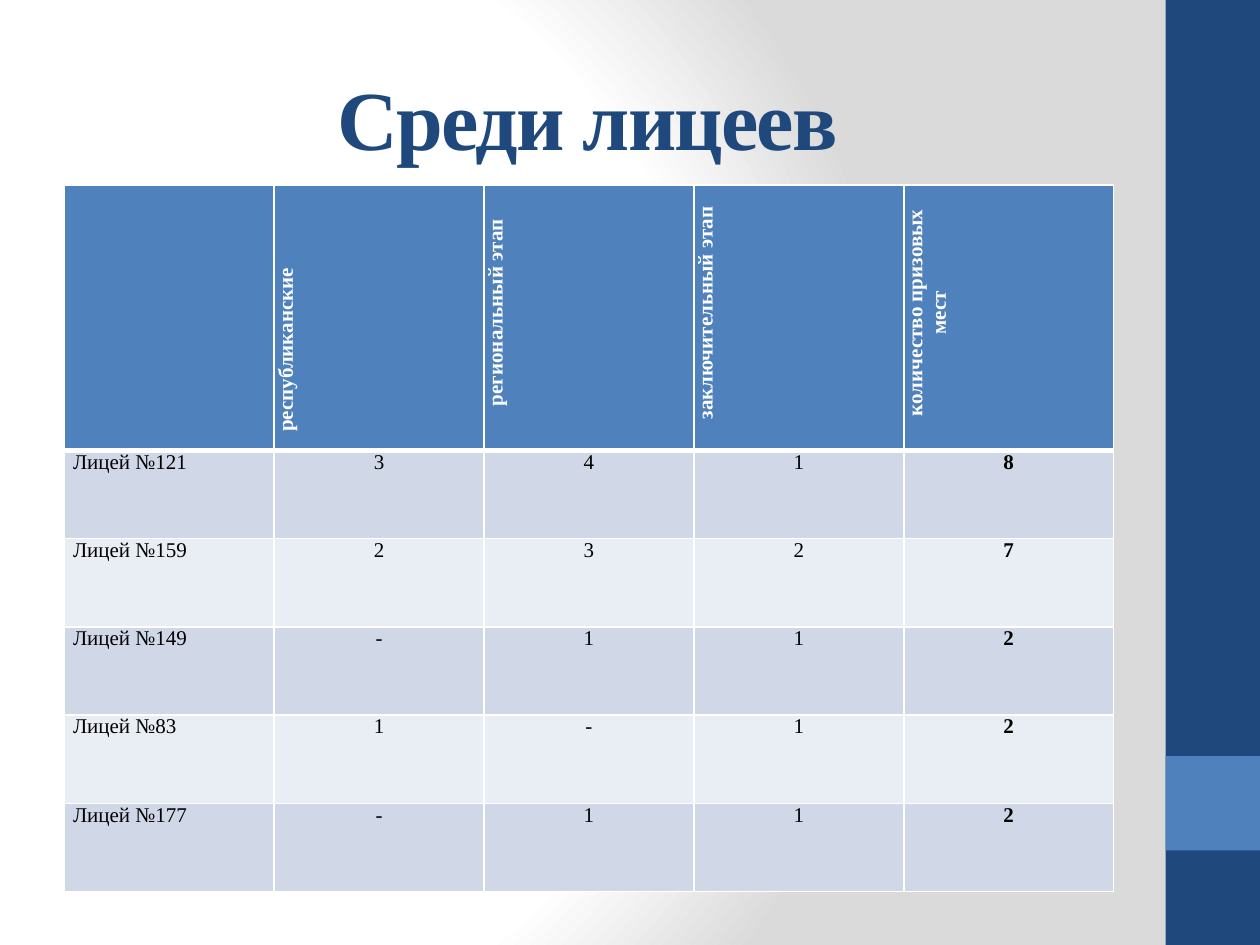
from pptx import Presentation
from pptx.dml.color import RGBColor
from pptx.enum.shapes import MSO_SHAPE
from pptx.enum.text import MSO_ANCHOR, PP_ALIGN
from pptx.oxml import parse_xml
from pptx.oxml.ns import nsdecls
from pptx.util import Inches, Pt

NAVY, BLUE, WHITE, BLACK = "1F497D", "4F81BD", "FFFFFF", "000000"
BANDS = ("D0D8E8", "E9EDF4")
ROWS = (
    ("", "республиканские", "региональный этап", "заключительный этап",
     "количество призовых мест"),
    ("Лицей №121", "3", "4", "1", "8"),
    ("Лицей №159", "2", "3", "2", "7"),
    ("Лицей №149", "-", "1", "1", "2"),
    ("Лицей №83", "1", "-", "1", "2"),
    ("Лицей №177", "-", "1", "1", "2"),
)


def paint(fmt, color):
    """Give a fill or font one solid colour."""
    if hasattr(fmt, "solid"):
        fmt.solid()
        fmt.fore_color.rgb = RGBColor.from_string(color)
    else:
        fmt.color.rgb = RGBColor.from_string(color)


def style(part, values):
    """Set each named attribute on a part."""
    for name, value in values.items():
        setattr(part, name, value)


def write(para, text, size, color, bold):
    """Put one styled run in a paragraph and return it."""
    run = para.add_run()
    run.text = text
    style(run.font, {"name": "Times New Roman", "size": Pt(size), "bold": bold})
    paint(run.font, color)
    return run


def add_back(slide):
    """Set the round white-to-grey background."""
    stops = "".join(
        f'<a:gs pos="{pos * 1000}"><a:srgbClr val="{color}"/></a:gs>'
        for pos, color in ((0, WHITE), (75, WHITE), (100, "DADADA")))
    slide.element.cSld.insert(0, parse_xml(
        f'<p:bg {nsdecls("p", "a")}><p:bgPr><a:gradFill rotWithShape="1">'
        f'<a:gsLst>{stops}</a:gsLst><a:path path="circle">'
        '<a:fillToRect l="20000" t="50000" r="100000" b="50000"/></a:path>'
        '</a:gradFill><a:effectLst/></p:bgPr></p:bg>'))


def add_bar(slide, top, height, color):
    """Draw one block of the right-hand stripe."""
    bar = slide.shapes.add_shape(
        MSO_SHAPE.RECTANGLE, Inches(9.25), Inches(top), Inches(0.75), Inches(height))
    bar.shadow.inherit = False
    paint(bar.fill, color)
    bar.line.fill.background()


def add_title(slide, text):
    """Write the slide heading."""
    box = slide.shapes.add_textbox(Inches(0.5), Inches(0.3), Inches(8.33), Inches(1.25))
    frame = box.text_frame
    style(frame, {"word_wrap": True, "vertical_anchor": MSO_ANCHOR.MIDDLE})
    para = frame.paragraphs[0]
    para.alignment = PP_ALIGN.CENTER
    run = write(para, text, 48, NAVY, True)
    run.font._element.set("spc", "-100")


def add_edges(cell, top, bottom):
    """Draw white borders round a cell."""
    widths = {"lnL": 1, "lnR": 1, "lnT": top, "lnB": bottom}
    props = cell._tc.get_or_add_tcPr()
    for i, (tag, width) in enumerate(widths.items()):
        props.insert(i, parse_xml(
            f'<a:{tag} {nsdecls("a")} w="{Pt(width)}"><a:solidFill>'
            f'<a:srgbClr val="{WHITE}"/></a:solidFill></a:{tag}>'))


def fill_cell(cell, text, row, col):
    """Style and fill one cell by its place in the table."""
    head = row == 0
    paint(cell.fill, BLUE if head else BANDS[(row - 1) % 2])
    add_edges(cell, 3 if row == 1 else 1, 3 if head else 1)
    if not text:
        return
    style(cell, {"margin_left": Inches(0.07), "margin_right": Inches(0.07),
                 "margin_top": 0, "margin_bottom": 0})
    para = cell.text_frame.paragraphs[0]
    if col > (1 if head else 0):
        para.alignment = PP_ALIGN.CENTER
    if head:
        cell._tc.tcPr.set("vert", "vert270")
        para._p.get_or_add_pPr().set("marL", str(Inches(0.08)))
    write(para, text, 12, WHITE if head else BLACK, head or col == 4)


def add_grid(slide):
    """Build the table of results."""
    frame = slide.shapes.add_table(
        len(ROWS), len(ROWS[0]), Inches(0.51), Inches(1.47), Inches(8.33), Inches(4.9))
    table = frame.table
    for i, row in enumerate(ROWS):
        table.rows[i].height = Inches(0.7 if i else 1.42)
        for j, text in enumerate(row):
            fill_cell(table.cell(i, j), text, i, j)


def main():
    """Build and save the slide."""
    deck = Presentation()
    style(deck, {"slide_width": Inches(10), "slide_height": Inches(7.5)})
    slide = deck.slides.add_slide(deck.slide_layouts[6])
    add_back(slide)
    add_bar(slide, 0, 7.5, NAVY)
    add_bar(slide, 6, 0.75, BLUE)
    add_title(slide, "Среди лицеев")
    add_grid(slide)
    deck.save("out.pptx")


if __name__ == "__main__":
    main()
